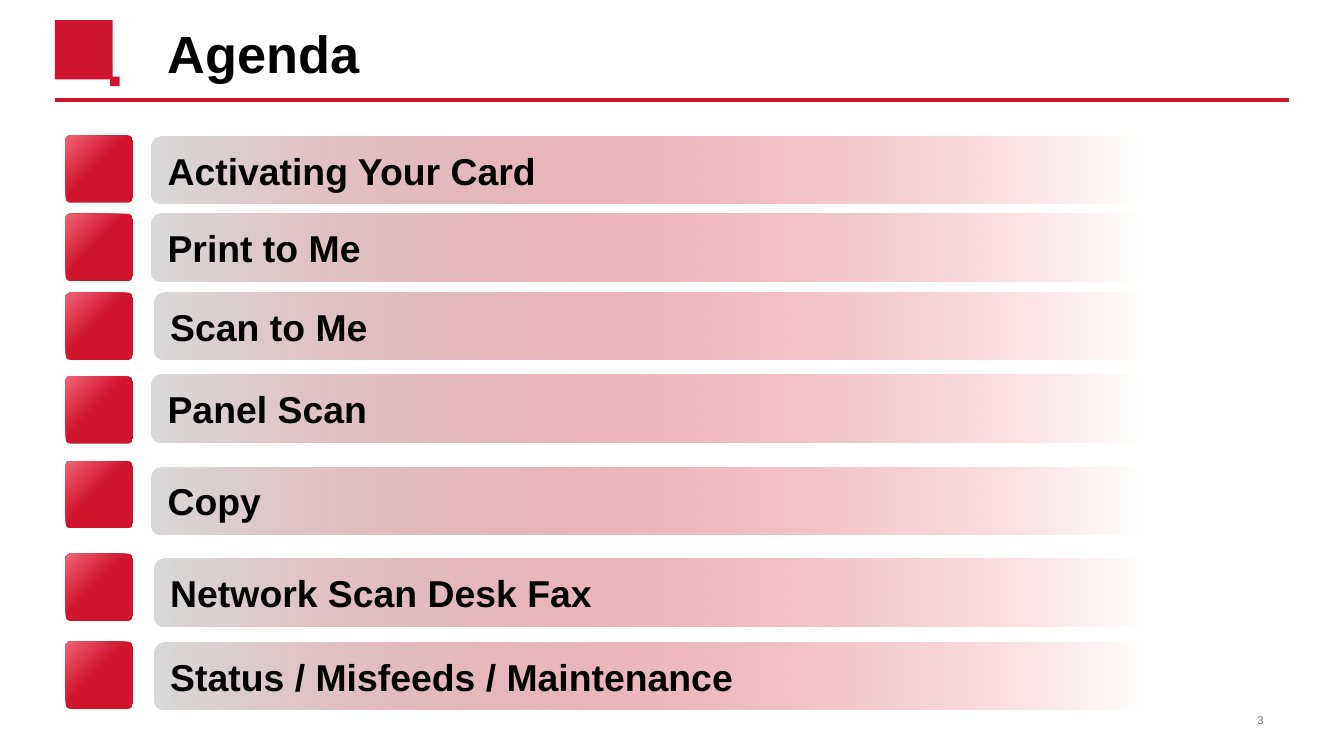
import pptx
import pptx.util
import pptx.dml.color
import pptx.enum.shapes
import pptx.enum.text
import pptx.oxml
import pptx.oxml.ns
from pptx.util import Cm

COLORS = {"red": "CF142B", "glow": "F06475", "gray": "D9D9D9",
          "fade": "DD0620", "text": "000000", "number": "717171"}
SHAPE = pptx.enum.shapes.MSO_SHAPE
ALIGN = pptx.enum.text.PP_ALIGN


def write(frame, words, size, color, bold=False, align=ALIGN.LEFT):
    """Put one formatted run into a vertically centred frame."""
    frame.word_wrap = True
    frame.vertical_anchor = pptx.enum.text.MSO_ANCHOR.MIDDLE
    frame.paragraphs[0].alignment = align
    run = frame.paragraphs[0].add_run()
    run.text = words
    run.font.name = "Arial"
    run.font.size = pptx.util.Pt(size)
    run.font.bold = bold
    run.font.color.rgb = pptx.dml.color.RGBColor.from_string(COLORS[color])


def add_gradient_box(left, top, width, corner, stops, direction):
    """Add a rounded box; stops are (percent, colour, opacity percent)."""
    box = slide.shapes.add_shape(SHAPE.ROUNDED_RECTANGLE, Cm(left), Cm(top), Cm(width), Cm(1.27))
    box.adjustments[0] = corner
    box.shadow.inherit = False
    box.line.fill.background()
    box.fill.background()
    stop_xml = "".join(
        f'<a:gs pos="{at * 1000}"><a:srgbClr val="{COLORS[color]}">'
        f'<a:alpha val="{opacity * 1000}"/></a:srgbClr></a:gs>'
        for at, color, opacity in stops)
    gradient = pptx.oxml.parse_xml(
        f'<a:gradFill {pptx.oxml.ns.nsdecls("a")} rotWithShape="1">'
        f'<a:gsLst>{stop_xml}</a:gsLst>{direction}</a:gradFill>')
    properties = box._element.spPr
    properties.replace(properties.find(pptx.oxml.ns.qn("a:noFill")), gradient)
    return box


deck = pptx.Presentation()
deck.slide_width, deck.slide_height = Cm(25.4), Cm(14.28)
slide = deck.slides.add_slide(deck.slide_layouts[5])
red = pptx.dml.color.RGBColor.from_string(COLORS["red"])

# Header mark: a square with a small one at its corner, in hundredths of a cm
outline = slide.shapes.build_freeform(104, 38, scale=3600)
outline.add_line_segments([(213, 38), (213, 145), (226, 145), (226, 163),
                           (208, 163), (208, 150), (104, 150)], close=True)
header_mark = outline.convert_to_shape()
header_mark.shadow.inherit = False
header_mark.fill.solid()
header_mark.fill.fore_color.rgb = red
header_mark.line.fill.background()

# Header rule
header_rule = slide.shapes.add_connector(
    pptx.enum.shapes.MSO_CONNECTOR.STRAIGHT, Cm(1.04), Cm(1.89), Cm(24.36), Cm(1.89))
header_rule.line.color.rgb = red
header_rule.line.width = pptx.util.Pt(2)
header_rule._element.spPr.append(
    pptx.oxml.parse_xml(f'<a:effectLst {pptx.oxml.ns.nsdecls("a")}/>'))

# Title
title = slide.shapes.title
title.left, title.top, title.width, title.height = Cm(2.92), Cm(0.36), Cm(16.51), Cm(1.27)
write(title.text_frame, "Agenda", 28, "text", bold=True)

# Slide number
slide_number = slide.shapes.add_textbox(Cm(18.21), Cm(13.23), Cm(5.92), Cm(0.76))
write(slide_number.text_frame, "3", 6, "number", align=ALIGN.RIGHT)

# Agenda rows: topic, bar left, bar top, marker top
agenda = [
    ("Activating Your Card", 2.87, 2.58, 2.56),
    ("Print to Me", 2.87, 4.04, 4.04),
    ("Scan to Me", 2.92, 5.53, 5.53),
    ("Panel Scan", 2.87, 7.08, 7.11),
    ("Copy", 2.87, 8.83, 8.71),
    ("Network Scan Desk Fax", 2.92, 10.56, 10.46),
    ("Status / Misfeeds / Maintenance", 2.92, 12.14, 12.12),
]
for topic, bar_left, bar_top, marker_top in agenda:
    bar = add_gradient_box(bar_left, bar_top, 18.75, 0.13,
                           [(0, "gray", 100), (100, "fade", 0)],
                           '<a:lin ang="0" scaled="0"/>')
    write(bar.text_frame, topic, 20, "text", bold=True)
    bar.text_frame.margin_right = Cm(0.94)
    add_gradient_box(1.24, marker_top, 1.27, 0.07,
                     [(0, "glow", 100), (47, "red", 100), (100, "red", 100)],
                     '<a:path path="circle"><a:fillToRect r="100000" b="100000"/></a:path>')

deck.save("out.pptx")
